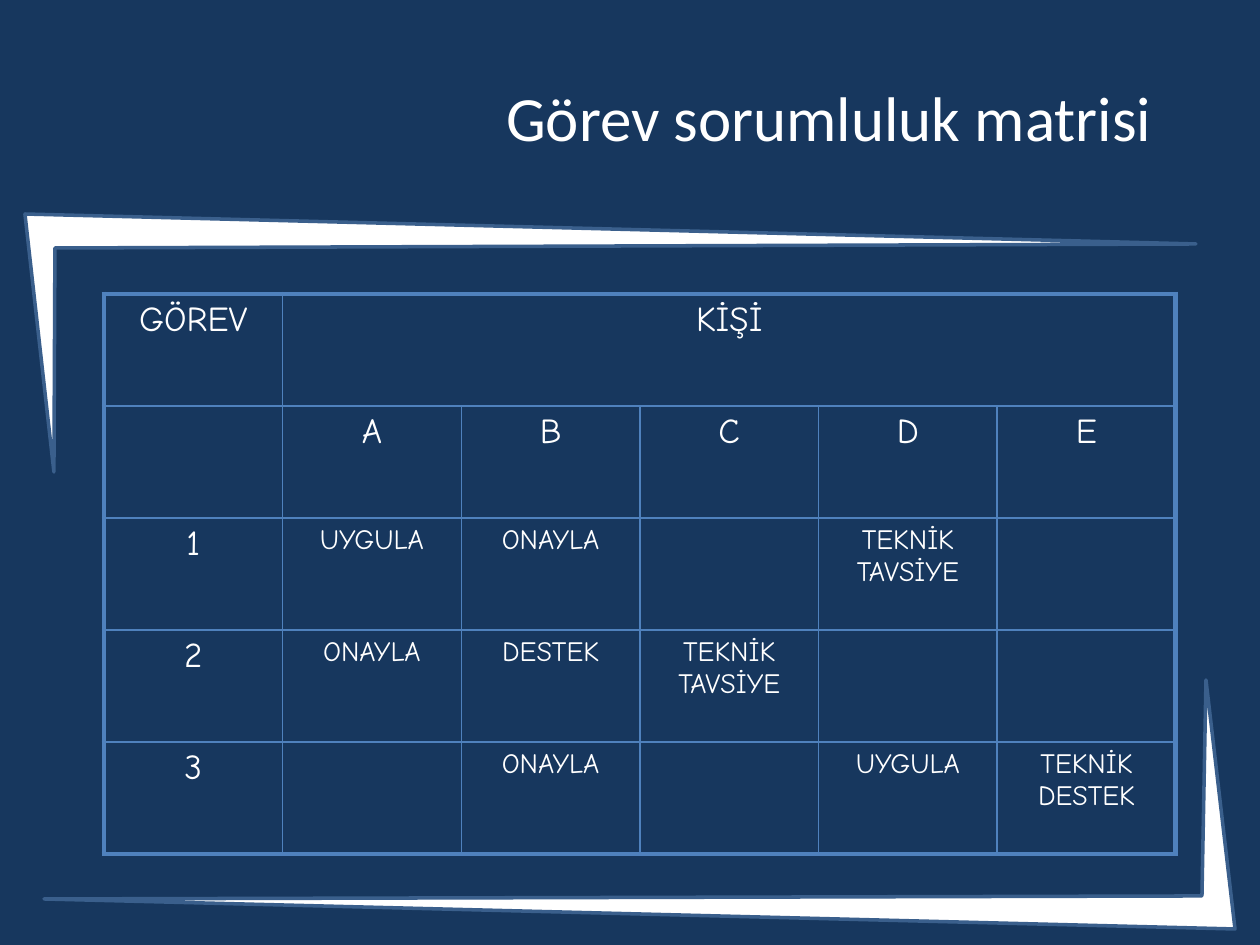
from lxml import etree
from pptx import Presentation
from pptx.dml.color import RGBColor
from pptx.enum.text import MSO_ANCHOR, PP_ALIGN
from pptx.oxml.ns import qn
from pptx.util import Pt

PX = 914400 / 126
NAVY = RGBColor(0x17, 0x37, 0x5E)
WHITE = RGBColor(0xFF, 0xFF, 0xFF)
STEEL = RGBColor(0x3A, 0x5F, 0x8C)
BLUE = RGBColor(0x4F, 0x81, 0xBD)
CENTER = PP_ALIGN.CENTER
MIDDLE = MSO_ANCHOR.MIDDLE
TOP = MSO_ANCHOR.TOP

TITLE_ONLY = 5
HEADER_ROWS = 2
MATRIX = [
    ["GÖREV", "KİŞİ", "", "", "", ""],
    ["", "A", "B", "C", "D", "E"],
    ["1", "UYGULA", "ONAYLA", "", "TEKNİK TAVSİYE", ""],
    ["2", "ONAYLA", "DESTEK", "TEKNİK TAVSİYE", "", ""],
    ["3", "", "ONAYLA", "", "UYGULA", "TEKNİK DESTEK"],
]


def px(length):
    """Turn a length in px into EMU."""
    return round(length * PX)


def write(frame, text, size, font="Comic Neue", color=WHITE, align=CENTER):
    """Fill a text frame with one formatted paragraph."""
    paragraph = frame.paragraphs[0]
    paragraph.alignment = align
    run = paragraph.add_run()
    run.text = text
    run.font.name = font
    run.font.size = Pt(size)
    run.font.bold = False
    run.font.color.rgb = color


def add_title(slide, left, top, width, height):
    """Place and format the slide title."""
    title = slide.shapes.title
    title.left, title.top = px(left), px(top)
    title.width, title.height = px(width), px(height)
    title.text_frame.word_wrap = True
    title.text_frame.vertical_anchor = MIDDLE
    write(title.text_frame, "Görev sorumluluk matrisi", 36, font="Calibri")


def add_bracket(slide, left, top, width, height, inner, turned=False):
    """Draw a tapering corner bracket, optionally turned by half a circle."""
    outline = [(0, 0), (width, 30), inner, (29, height)]
    if turned:
        outline = [(width - x, height - y) for x, y in outline]
    points = [(left + x, top + y) for x, y in outline]
    builder = slide.shapes.build_freeform(*points[0], scale=PX)
    builder.add_line_segments(points[1:], close=True)
    bracket = builder.convert_to_shape()
    bracket.shadow.inherit = False
    bracket.fill.solid()
    bracket.fill.fore_color.rgb = WHITE
    bracket.line.color.rgb = STEEL
    bracket.line.width = Pt(2)
    etree.SubElement(bracket.line._get_or_add_ln(), qn("a:round"))


def set_borders(cell, widths):
    """Draw the left, right, top and bottom borders of a cell."""
    properties = cell._tc.get_or_add_tcPr()
    for side, width in zip("LRTB", widths):
        line = etree.SubElement(properties, qn(f"a:ln{side}"), w=str(Pt(width)))
        fill = etree.SubElement(line, qn("a:solidFill"))
        etree.SubElement(fill, qn("a:srgbClr"), val=str(BLUE))


def add_matrix(slide, left, top, width, height):
    """Build the task and person responsibility table."""
    row_count, column_count = len(MATRIX), len(MATRIX[0])
    table = slide.shapes.add_table(
        row_count, column_count, px(left), px(top), px(width), px(height)
    ).table
    table.first_row = table.horz_banding = False
    for column in table.columns:
        column.width = px(width / column_count)
    for row in table.rows:
        row.height = px(height / row_count)
    table.cell(0, 1).merge(table.cell(0, column_count - 1))

    for r, labels in enumerate(MATRIX):
        for c, label in enumerate(labels):
            cell = table.cell(r, c)
            last_column = c + cell.span_width == column_count
            edges = (c == 0, last_column, r == 0, r == row_count - 1)
            set_borders(cell, [3 if outer else 1 for outer in edges])
            cell.fill.background()
            cell.vertical_anchor = TOP
            if label:
                is_header = r < HEADER_ROWS or c == 0
                write(cell.text_frame, label, 20 if is_header else 16)


def main():
    """Build and save the presentation."""
    deck = Presentation()
    deck.slide_width, deck.slide_height = px(1260), px(945)
    slide = deck.slides.add_slide(deck.slide_layouts[TITLE_ONLY])
    slide.background.fill.solid()
    slide.background.fill.fore_color.rgb = NAVY
    add_bracket(slide, 25, 214, 1171, 258, inner=(30, 34))
    add_bracket(slide, 44, 680, 1191, 249, inner=(33, 33), turned=True)
    add_title(slide, 461, 38, 736, 157)
    add_matrix(slide, 104, 294, 1072, 560)
    deck.save("out.pptx")


if __name__ == "__main__":
    main()
